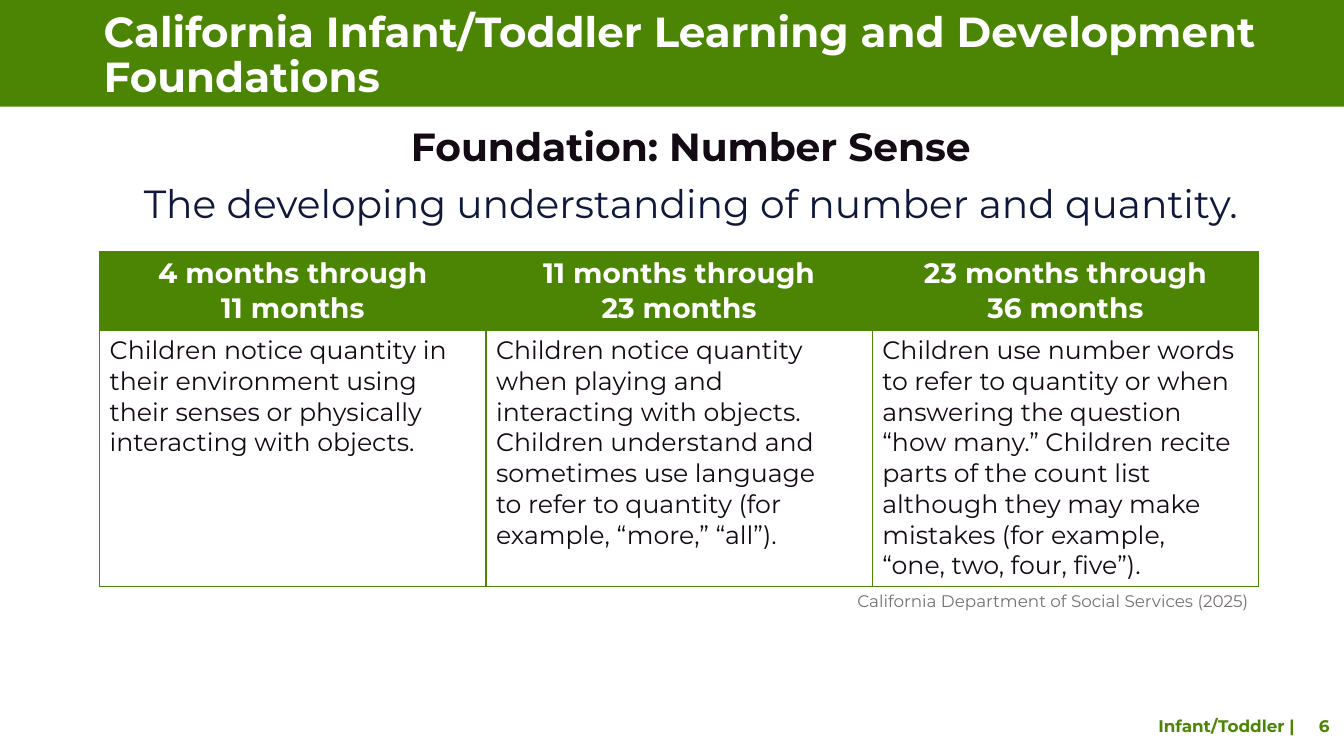
import pptx
import pptx.dml.color
import pptx.enum.shapes
import pptx.enum.text
import pptx.oxml
import pptx.oxml.ns
import pptx.util
from pptx.util import Cm

FONT = "Montserrat"
GREEN, WHITE, INK, NAVY, GRAY = "4C8503", "FFFFFF", "140A14", "0F173D", "767171"
ALIGN = pptx.enum.text.PP_ALIGN
ANCHOR = pptx.enum.text.MSO_ANCHOR

AGE_BANDS = [
    ("4 months through\v11 months", [
        "Children notice quantity in", "their environment using",
        "their senses or physically", "interacting with objects."]),
    ("11 months through\v23 months", [
        "Children notice quantity", "when playing and",
        "interacting with objects.", "Children understand and",
        "sometimes use language", "to refer to quantity (for",
        "example, “more,” “all”)."]),
    ("23 months through\v36 months", [
        "Children use number words", "to refer to quantity or when",
        "answering the question", "“how many.” Children recite",
        "parts of the count list", "although they may make",
        "mistakes (for example,", "“one, two, four, five”)."]),
]


def rgb(value):
    return pptx.dml.color.RGBColor.from_string(value)


def write(frame, text, size=18, color=INK, bold=False, align=ALIGN.LEFT,
          spacing=1.0, before=0, tabs=()):
    """Add one formatted paragraph, using the empty first one if there is one."""
    paragraph = frame.paragraphs[0]
    if paragraph.runs:
        paragraph = frame.add_paragraph()
    paragraph.text = text
    paragraph.alignment = align
    paragraph.line_spacing = spacing
    paragraph.space_before = pptx.util.Pt(before)
    if tabs:
        stops = pptx.oxml.parse_xml(f"<a:tabLst {pptx.oxml.ns.nsdecls('a')}>" + "".join(
            f'<a:tab pos="{stop}" algn="r"/>' for stop in tabs) + "</a:tabLst>")
        paragraph._p.get_or_add_pPr().append(stops)
    for run in paragraph.runs:
        run.font.name = FONT
        run.font.size = pptx.util.Pt(size)
        run.font.bold = bold
        run.font.color.rgb = rgb(color)


def add_text_frame(slide, left, top, width, height, anchor=ANCHOR.TOP):
    shape = slide.shapes.add_textbox(Cm(left), Cm(top), Cm(width), Cm(height))
    shape.text_frame.word_wrap = True
    shape.text_frame.vertical_anchor = anchor
    return shape.text_frame


def add_band(slide, width, height):
    shape = slide.shapes.add_shape(
        pptx.enum.shapes.MSO_SHAPE.RECTANGLE, 0, 0, width, height)
    shape.shadow.inherit = False
    shape.fill.solid()
    shape.fill.fore_color.rgb = rgb(GREEN)
    shape.line.fill.background()


def style_cell(cell, fill):
    properties = cell._tc.get_or_add_tcPr()
    for side in ("lnL", "lnR", "lnT", "lnB"):
        properties.append(pptx.oxml.parse_xml(
            f'<a:{side} {pptx.oxml.ns.nsdecls("a")} w="{pptx.util.Pt(1)}"><a:solidFill>'
            f'<a:srgbClr val="{GREEN}"/></a:solidFill></a:{side}>'))
    cell.fill.solid()
    cell.fill.fore_color.rgb = rgb(fill)


def add_age_table(slide, left, top, width, row_heights):
    table = slide.shapes.add_table(
        len(row_heights), len(AGE_BANDS), Cm(left), Cm(top), Cm(width),
        Cm(sum(row_heights))).table
    table.horz_banding = False
    for row, height in zip(table.rows, row_heights):
        row.height = Cm(height)
    for column, (ages, lines) in enumerate(AGE_BANDS):
        header, body = table.cell(0, column), table.cell(1, column)
        style_cell(header, GREEN)
        style_cell(body, WHITE)
        write(header.text_frame, ages, size=20, color=WHITE, bold=True,
              align=ALIGN.CENTER)
        for line in lines:
            write(body.text_frame, line)


def main():
    presentation = pptx.Presentation()
    presentation.slide_width, presentation.slide_height = Cm(33.87), Cm(19.05)
    slide = presentation.slides.add_slide(presentation.slide_layouts[6])

    # Footer
    footer = add_text_frame(slide, 24.1, 17.78, 9.68, 1.02, ANCHOR.MIDDLE)
    write(footer, "\tInfant/Toddler |\t6", size=12, color=GREEN, bold=True,
          tabs=(Cm(8.28), Cm(9.16)))

    # Title band
    add_band(slide, presentation.slide_width, Cm(2.69))
    title = add_text_frame(slide, 2.36, 0.13, 30.1, 2.57, ANCHOR.MIDDLE)
    write(title, "California Infant/Toddler Learning and Development Foundations",
          size=30, color=WHITE, bold=True, spacing=0.9)

    # Foundation and its definition
    foundation = add_text_frame(slide, 2.36, 3.1, 30.1, 3.12)
    write(foundation, "Foundation: Number Sense", size=28, bold=True,
          align=ALIGN.CENTER, spacing=0.9)
    write(foundation, "The developing understanding of number and quantity.",
          size=28, color=NAVY, align=ALIGN.CENTER, spacing=0.9, before=10)

    # Age bands and source
    add_age_table(slide, 2.51, 6.34, 29.21, (1.98, 6.45))
    source = add_text_frame(slide, 2.13, 14.76, 29.59, 0.76)
    write(source, "California Department of Social Services (2025)", size=12,
          color=GRAY, align=ALIGN.RIGHT)

    presentation.save("out.pptx")


if __name__ == "__main__":
    main()
